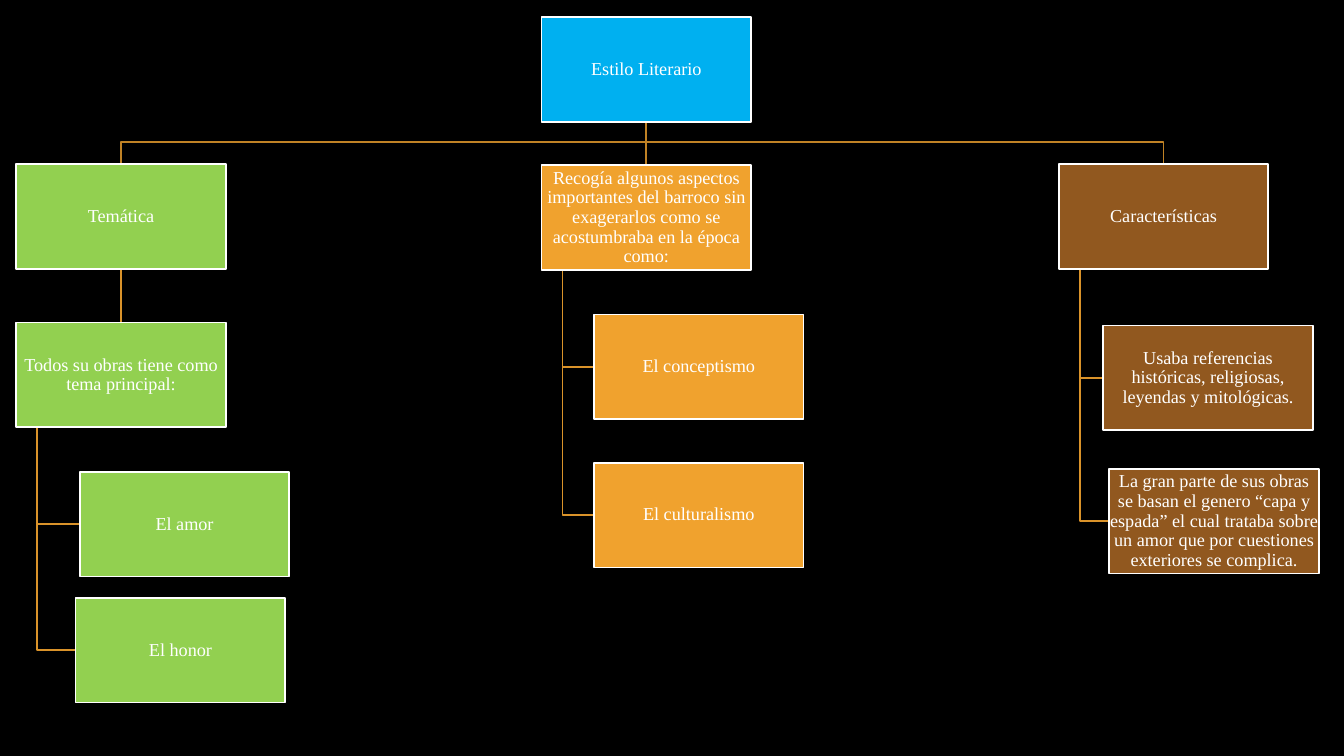
from dataclasses import dataclass, field

from pptx import Presentation
from pptx import util as u
from pptx.dml.color import RGBColor
from pptx.enum import shapes, text
from pptx.oxml.ns import qn

BOX_W, BOX_H = 2.08, 1.04
INDENT = 0.21  # side branches leave the parent this far from its left edge
BLUE, GREEN, GOLD, BROWN = "00B0F0", "92D050", "F0A22E", "91581F"


@dataclass
class Node:
    label: str
    left: float
    top: float
    fill: str
    kids: list = field(default_factory=list)

    @property
    def mid(self):
        return self.left + BOX_W / 2

    @property
    def base(self):
        return self.top + BOX_H


def color(code):
    return RGBColor.from_string(code)


def assign(item, values):
    for name, value in values.items():
        setattr(item, name, value)


class Chart:
    """Draws a tree of boxes on one slide."""

    edge = u.Pt(1.25)
    white = "FFFFFF"
    frame = dict(word_wrap=True, vertical_anchor=text.MSO_ANCHOR.MIDDLE,
                 **{f"margin_{side}": u.Inches(0.01)
                    for side in ("left", "right", "top", "bottom")})
    para = dict(alignment=text.PP_ALIGN.CENTER, line_spacing=0.9)
    font = dict(name="Times New Roman", size=u.Pt(13))

    def __init__(self, slide):
        self.slide = slide
        fill = slide.background.fill
        fill.solid()
        fill.fore_color.rgb = color("000000")

    def stroke(self, item, code):
        item.line.color.rgb = color(code)
        item.line.width = self.edge

    def box(self, node):
        place = [u.Inches(n) for n in (node.left, node.top, BOX_W, BOX_H)]
        rect = self.slide.shapes.add_shape(shapes.MSO_SHAPE.RECTANGLE, *place)
        rect.shadow.inherit = False
        rect.fill.solid()
        rect.fill.fore_color.rgb = color(node.fill)
        self.stroke(rect, self.white)
        frame = rect.text_frame
        assign(frame, self.frame)
        para = frame.paragraphs[0]
        assign(para, self.para)
        run = para.add_run()
        run.text = node.label
        assign(run.font, self.font)
        run.font.color.rgb = color(self.white)

    def path_line(self, points, code):
        """Draw a straight connector or an open bent line."""
        spots = [(u.Inches(x), u.Inches(y)) for x, y in points]
        if len(spots) == 2:
            line = self.slide.shapes.add_connector(
                shapes.MSO_CONNECTOR.STRAIGHT, *spots[0], *spots[1])
            props = line._element.spPr
            props.append(props.makeelement(qn("a:effectLst"), {}))
        else:
            form = self.slide.shapes.build_freeform(*spots[0])
            form.add_line_segments(spots[1:], close=False)
            line = form.convert_to_shape()
            line.shadow.inherit = False
            line.fill.background()
        self.stroke(line, code)

    def links(self, node, depth=0):
        for kid in reversed(node.kids):
            if abs(kid.mid - node.mid) < 0.01:
                points = [(node.mid, node.base), (node.mid, kid.top)]
            elif depth == 0:
                bar = node.base + 0.2
                points = [(node.mid, node.base), (node.mid, bar),
                          (kid.mid, bar), (kid.mid, kid.top)]
            else:
                stem, level = node.left + INDENT, kid.top + BOX_H / 2
                points = [(stem, node.base), (stem, level), (kid.left, level)]
            self.path_line(points, "DA932A" if depth else "C08225")
            self.links(kid, depth + 1)

    def boxes(self, node):
        self.box(node)
        for kid in node.kids:
            self.boxes(kid)


TREE = Node("Estilo Literario", 5.37, 0.17, BLUE, [
    Node("Temática", 0.16, 1.63, GREEN, [
        Node("Todos su obras tiene como tema principal:", 0.16, 3.2, GREEN, [
            Node("El amor", 0.79, 4.68, GREEN),
            Node("El honor", 0.75, 5.93, GREEN),
        ]),
    ]),
    Node("Recogía algunos aspectos importantes del barroco sin exagerarlos "
         "como se acostumbraba en la época como:", 5.37, 1.64, GOLD, [
             Node("El conceptismo", 5.89, 3.12, GOLD),
             Node("El culturalismo", 5.89, 4.59, GOLD),
         ]),
    Node("Características", 10.5, 1.63, BROWN, [
        Node("Usaba referencias históricas, religiosas, leyendas y "
             "mitológicas.", 10.94, 3.23, BROWN),
        Node("La gran parte de sus obras se basan el genero “capa y espada” "
             "el cual trataba sobre un amor que por cuestiones exteriores se "
             "complica.", 11, 4.65, BROWN),
    ]),
])


def main():
    deck = Presentation()
    assign(deck, dict(slide_width=u.Inches(13.33), slide_height=u.Inches(7.5)))
    chart = Chart(deck.slides.add_slide(deck.slide_layouts[6]))
    chart.links(TREE)
    chart.boxes(TREE)
    deck.save("out.pptx")


if __name__ == "__main__":
    main()
